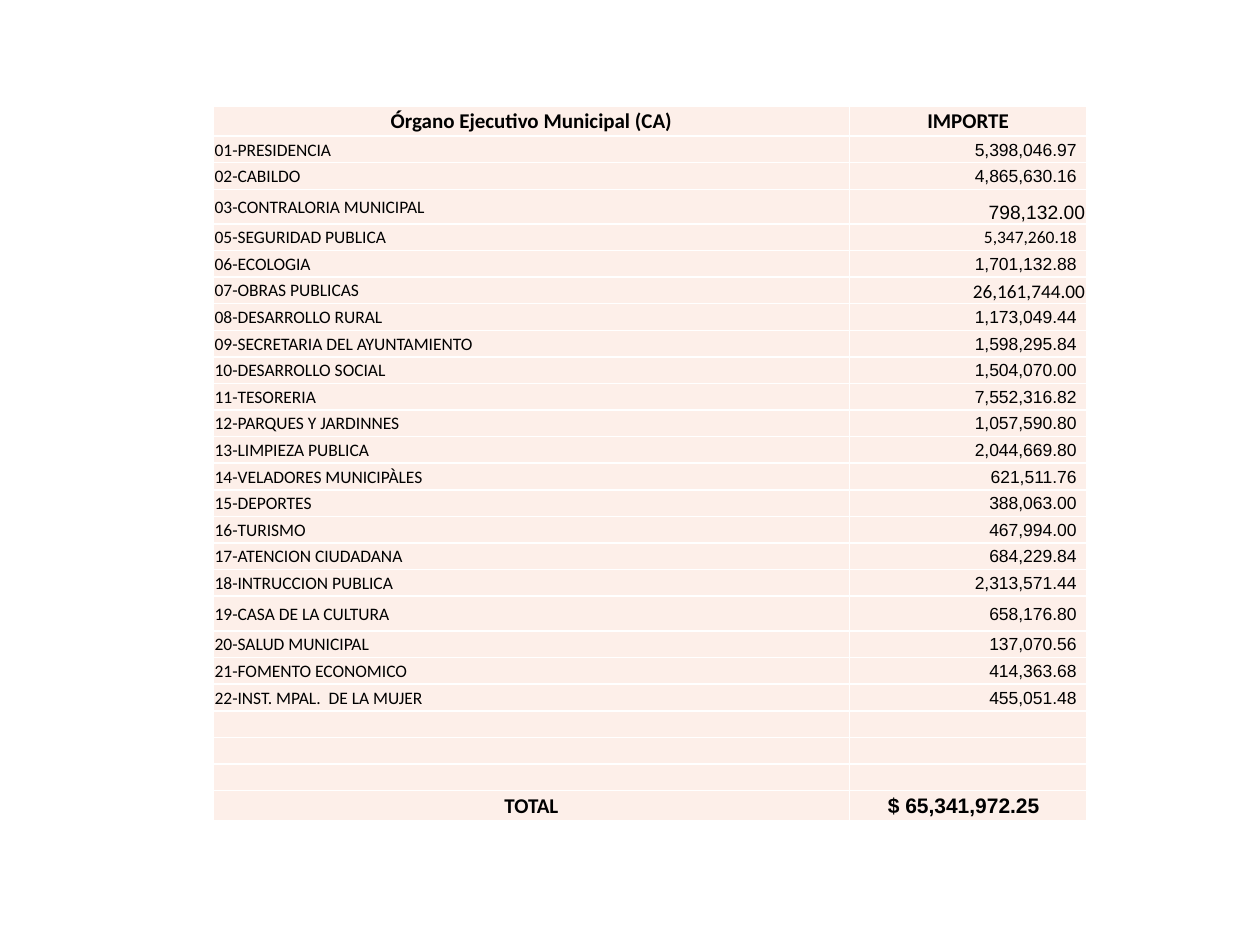
from lxml import etree
from pptx import Presentation
from pptx.dml.color import RGBColor
from pptx.enum import text
from pptx.oxml import ns
from pptx.util import Pt

COLORS = {"cell": "FDEFE9", "border": "FFFFFF", "text": "000000"}
LEFT, CENTER, RIGHT = text.PP_ALIGN.LEFT, text.PP_ALIGN.CENTER, text.PP_ALIGN.RIGHT

HEADER = ("Órgano Ejecutivo Municipal (CA)", "IMPORTE")
DEPARTMENTS = [
    ("01-PRESIDENCIA", "5,398,046.97"),
    ("02-CABILDO", "4,865,630.16"),
    ("03-CONTRALORIA MUNICIPAL", "798,132.00"),
    ("05-SEGURIDAD PUBLICA", "5,347,260.18"),
    ("06-ECOLOGIA", "1,701,132.88"),
    ("07-OBRAS PUBLICAS", "26,161,744.00"),
    ("08-DESARROLLO RURAL", "1,173,049.44"),
    ("09-SECRETARIA DEL AYUNTAMIENTO", "1,598,295.84"),
    ("10-DESARROLLO SOCIAL", "1,504,070.00"),
    ("11-TESORERIA", "7,552,316.82"),
    ("12-PARQUES Y JARDINNES", "1,057,590.80"),
    ("13-LIMPIEZA PUBLICA", "2,044,669.80"),
    ("14-VELADORES MUNICIPÀLES", "621,511.76"),
    ("15-DEPORTES", "388,063.00"),
    ("16-TURISMO", "467,994.00"),
    ("17-ATENCION CIUDADANA", "684,229.84"),
    ("18-INTRUCCION PUBLICA", "2,313,571.44"),
    ("19-CASA DE LA CULTURA", "658,176.80"),
    ("20-SALUD MUNICIPAL", "137,070.56"),
    ("21-FOMENTO ECONOMICO", "414,363.68"),
    ("22-INST. MPAL.  DE LA MUJER", "455,051.48"),
]
TOTAL = ("TOTAL", "$ 65,341,972.25")
EMPTY_ROWS = 3

# Amounts that depart from the usual format, and rows of unusual height
AMOUNT_FORMATS = {
    "03": dict(size=11, right=0.75, anchor=text.MSO_ANCHOR.BOTTOM),
    "05": dict(font="Calibri"),
    "07": dict(font="Calibri", size=11, right=0.75, anchor=text.MSO_ANCHOR.BOTTOM),
}
ROW_HEIGHTS = {"03": 19.8, "19": 19.9}
ROW_HEIGHT, EDGE_ROW_HEIGHT = 15.2, 17.2


def add_borders(cell):
    properties = cell._tc.get_or_add_tcPr()
    for side in ("lnL", "lnR", "lnT", "lnB"):
        line = etree.SubElement(properties, ns.qn(f"a:{side}"), w=str(Pt(1)))
        fill = etree.SubElement(line, ns.qn("a:solidFill"))
        etree.SubElement(fill, ns.qn("a:srgbClr"), val=COLORS["border"])


def format_cell(cell, content, align=LEFT, font="Calibri", size=10, bold=False,
                right=0.75, anchor=text.MSO_ANCHOR.MIDDLE):
    add_borders(cell)
    cell.fill.solid()
    cell.fill.fore_color.rgb = RGBColor.from_string(COLORS["cell"])
    cell.margin_left = cell.margin_top = Pt(0.75)
    cell.margin_right, cell.margin_bottom = Pt(right), Pt(0)
    cell.vertical_anchor = anchor
    paragraph = cell.text_frame.paragraphs[0]
    paragraph.alignment = align
    paragraph.font.name, paragraph.font.size = font, Pt(size)
    paragraph.font.bold = bold
    paragraph.font.color.rgb = RGBColor.from_string(COLORS["text"])
    if content:
        paragraph.add_run().text = content
    else:  # keeps an empty row from growing
        etree.SubElement(paragraph._p, ns.qn("a:endParaRPr"), sz=str(size * 100))


def add_budget_table(slide, left, top, width, height):
    rows = [HEADER, *DEPARTMENTS, *[("", "")] * EMPTY_ROWS, TOTAL]
    frame = slide.shapes.add_table(len(rows), 2, Pt(left), Pt(top), Pt(width), Pt(height))
    table = frame.table
    table.first_row = table.horz_banding = False
    amount_width = 135.4
    table.columns[0].width = Pt(width - amount_width)
    table.columns[1].width = Pt(amount_width)

    for index, (name, amount) in enumerate(rows):
        code = name[:2]
        name_cell, amount_cell = table.cell(index, 0), table.cell(index, 1)
        if (name, amount) in (HEADER, TOTAL):
            table.rows[index].height = Pt(EDGE_ROW_HEIGHT)
            heading = dict(align=CENTER, size=12, bold=True)
            amount_format = dict(heading)
            if name == TOTAL[0]:
                amount_format.update(font="Arial", right=5.75)
        else:
            table.rows[index].height = Pt(ROW_HEIGHTS.get(code, ROW_HEIGHT))
            heading = {}
            amount_format = dict(align=RIGHT, font="Arial", right=5.75)
            amount_format.update(AMOUNT_FORMATS.get(code, {}))
        format_cell(name_cell, name, **heading)
        format_cell(amount_cell, amount, **amount_format)


def main():
    presentation = Presentation()
    presentation.slide_width, presentation.slide_height = Pt(720), Pt(540)
    slide = presentation.slides.add_slide(presentation.slide_layouts[6])
    add_budget_table(slide, 121.9, 60.6, 499, 409)
    presentation.save("out.pptx")


if __name__ == "__main__":
    main()
